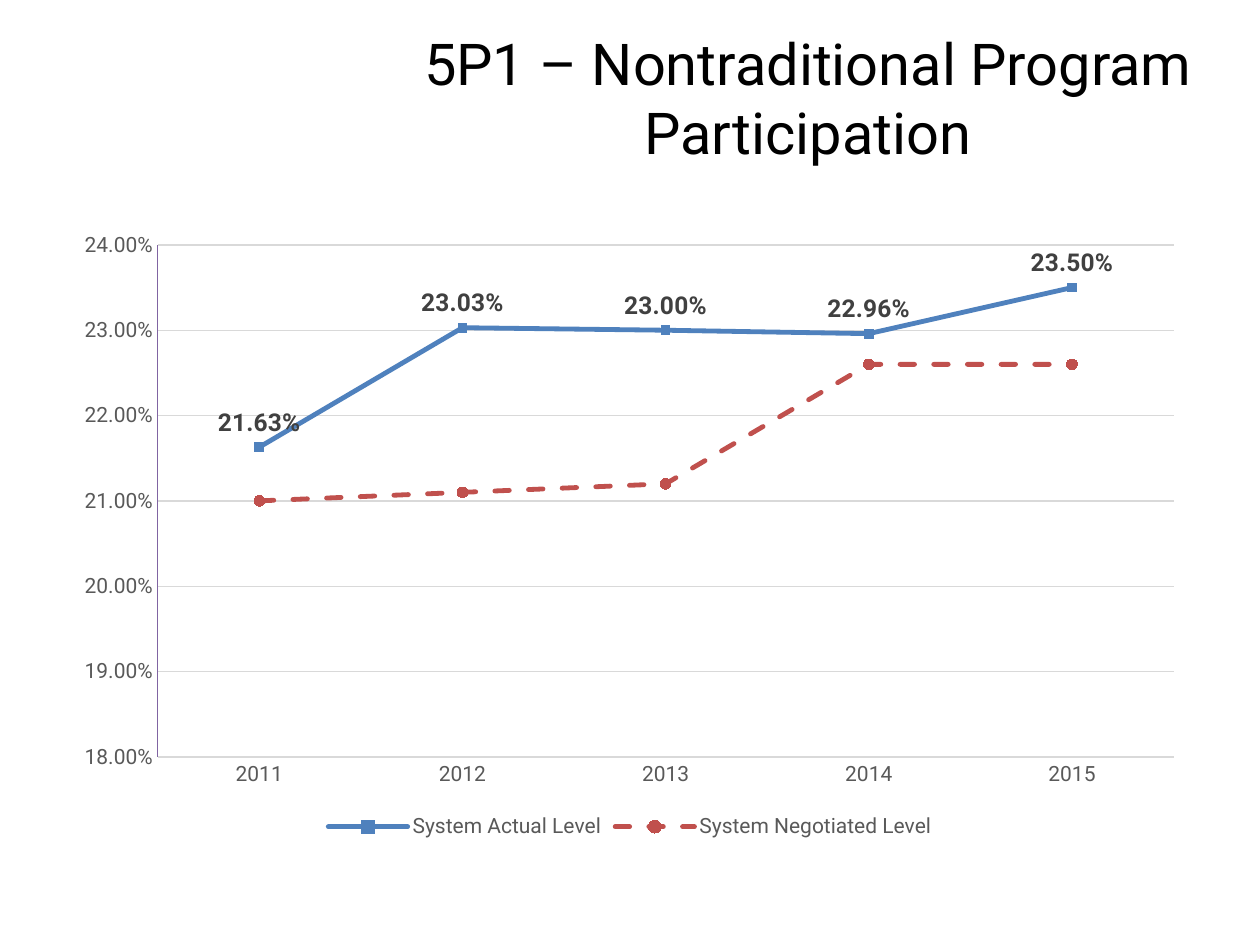
from dataclasses import dataclass
from typing import Optional

from lxml.etree import SubElement
from pptx import Presentation
from pptx.chart.data import CategoryChartData
from pptx.dml.color import RGBColor
from pptx.enum.chart import (XL_CHART_TYPE, XL_LABEL_POSITION, XL_LEGEND_POSITION,
                             XL_MARKER_STYLE, XL_TICK_MARK)
from pptx.enum.dml import MSO_LINE
from pptx.enum.text import MSO_ANCHOR, MSO_AUTO_SIZE, PP_ALIGN
from pptx.oxml.ns import qn
from pptx.util import Cm, Pt


@dataclass(frozen=True)
class Theme:
    font: str = "Roboto"
    title_size: float = 33
    label_size: float = 14
    axis_size: float = 12
    chart_size: float = 10
    text: str = "000000"
    label: str = "404040"
    muted: str = "595959"
    grid: str = "D9D9D9"
    value_axis: str = "8064A2"


@dataclass(frozen=True)
class Frame:
    left: float
    top: float
    width: float
    height: float

    def lengths(self) -> tuple:
        return Cm(self.left), Cm(self.top), Cm(self.width), Cm(self.height)


@dataclass(frozen=True)
class Level:
    name: str
    values: tuple
    color: str
    marker: XL_MARKER_STYLE
    marker_size: int
    marker_color: str
    dash: Optional[MSO_LINE] = None
    labelled: bool = False


THEME = Theme()
PERCENT = "0.00%"
YEARS = ("2011", "2012", "2013", "2014", "2015")
LEVELS = (
    Level("System Actual Level", (0.2163, 0.2303, 0.23, 0.2296, 0.235),
          "4F81BD", XL_MARKER_STYLE.SQUARE, 5, "3D7CC7", labelled=True),
    Level("System Negotiated Level", (0.21, 0.211, 0.212, 0.226, 0.226),
          "C0504D", XL_MARKER_STYLE.CIRCLE, 6, "CB3E3A", dash=MSO_LINE.DASH),
)
TITLE_FRAME = Frame(7.82, 0.64, 16.94, 2.62)
CHART_FRAME = Frame(1.27, 4.45, 22.86, 12.57)
PLOT_FRAME = Frame(3.18, 4.94, 20.48, 10.32)


def style_font(font, size: float, color: str, bold: bool = False) -> None:
    font.name = THEME.font
    font.size = Pt(size)
    font.bold = bold
    font.color.rgb = RGBColor.from_string(color)


def style_line(line, color: str, width: float) -> None:
    line.color.rgb = RGBColor.from_string(color)
    line.width = Pt(width)


def add_title(page, words: str) -> None:
    title = page.shapes.title
    title.left, title.top, title.width, title.height = TITLE_FRAME.lengths()
    box = title.text_frame
    box.word_wrap = True
    box.auto_size = MSO_AUTO_SIZE.NONE
    box.vertical_anchor = MSO_ANCHOR.MIDDLE
    para = box.paragraphs[0]
    para.alignment = PP_ALIGN.CENTER
    span = para.add_run()
    span.text = words
    style_font(span.font, THEME.title_size, THEME.text)


def style_axis(axis, color: str, width: float) -> None:
    axis.major_tick_mark = axis.minor_tick_mark = XL_TICK_MARK.NONE
    style_font(axis.tick_labels.font, THEME.axis_size, THEME.muted)
    style_line(axis.format.line, color, width)


def style_series(series, level: Level) -> None:
    series.smooth = False
    style_line(series.format.line, level.color, 2.75)
    if level.dash:
        series.format.line.dash_style = level.dash
    series.format.line._get_or_add_ln().set("cap", "rnd")
    marker = series.marker
    marker.style, marker.size = level.marker, level.marker_size
    marker.format.fill.solid()
    marker.format.fill.fore_color.rgb = RGBColor.from_string(level.marker_color)
    style_line(marker.format.line, level.color, 0.75)
    if level.labelled:
        labels = series.data_labels
        labels.show_value = True
        labels.position = XL_LABEL_POSITION.ABOVE
        labels.number_format = PERCENT
        labels.number_format_is_linked = False
        style_font(labels.font, THEME.label_size, THEME.label, bold=True)


def place_plot(chart, chart_frame: Frame, plot_frame: Frame) -> None:
    """Fix the inner plot area as fractions of the chart frame."""
    area = chart._chartSpace.chart.plotArea
    for old in area.findall(qn("c:layout")):
        area.remove(old)
    layout = SubElement(area, qn("c:layout"))
    area.insert(0, layout)
    manual = SubElement(layout, qn("c:manualLayout"))
    settings = {
        "layoutTarget": "inner", "xMode": "edge", "yMode": "edge",
        "x": (plot_frame.left - chart_frame.left) / chart_frame.width,
        "y": (plot_frame.top - chart_frame.top) / chart_frame.height,
        "w": plot_frame.width / chart_frame.width,
        "h": plot_frame.height / chart_frame.height,
    }
    for name, value in settings.items():
        SubElement(manual, qn(f"c:{name}")).set("val", str(value))


def add_level_chart(page) -> None:
    data = CategoryChartData(number_format=PERCENT)
    data.categories = YEARS
    for level in LEVELS:
        data.add_series(level.name, level.values)
    chart = page.shapes.add_chart(
        XL_CHART_TYPE.LINE_MARKERS, *CHART_FRAME.lengths(), data).chart
    chart.has_title = False
    style_font(chart.font, THEME.chart_size, THEME.text)

    # Axes and gridlines
    style_axis(chart.category_axis, THEME.grid, 1)
    scale = chart.value_axis
    style_axis(scale, THEME.value_axis, 0.75)
    scale.minimum_scale, scale.maximum_scale, scale.major_unit = 0.18, 0.24, 0.01
    scale.tick_labels.number_format = PERCENT
    scale.tick_labels.number_format_is_linked = False
    scale.has_major_gridlines = True
    style_line(scale.major_gridlines.format.line, THEME.grid, 0.75)

    # Legend
    chart.has_legend = True
    chart.legend.position = XL_LEGEND_POSITION.BOTTOM
    chart.legend.include_in_layout = False
    style_font(chart.legend.font, THEME.axis_size, THEME.muted)

    # Lines
    chart.plots[0].vary_by_categories = False
    for series, level in zip(chart.plots[0].series, LEVELS):
        style_series(series, level)
    place_plot(chart, CHART_FRAME, PLOT_FRAME)


def main() -> None:
    deck = Presentation()
    deck.slide_width, deck.slide_height = Cm(25.4), Cm(19.05)
    page = deck.slides.add_slide(deck.slide_layouts[5])
    add_title(page, "5P1 – Nontraditional Program Participation")
    add_level_chart(page)
    deck.save("out.pptx")


if __name__ == "__main__":
    main()
